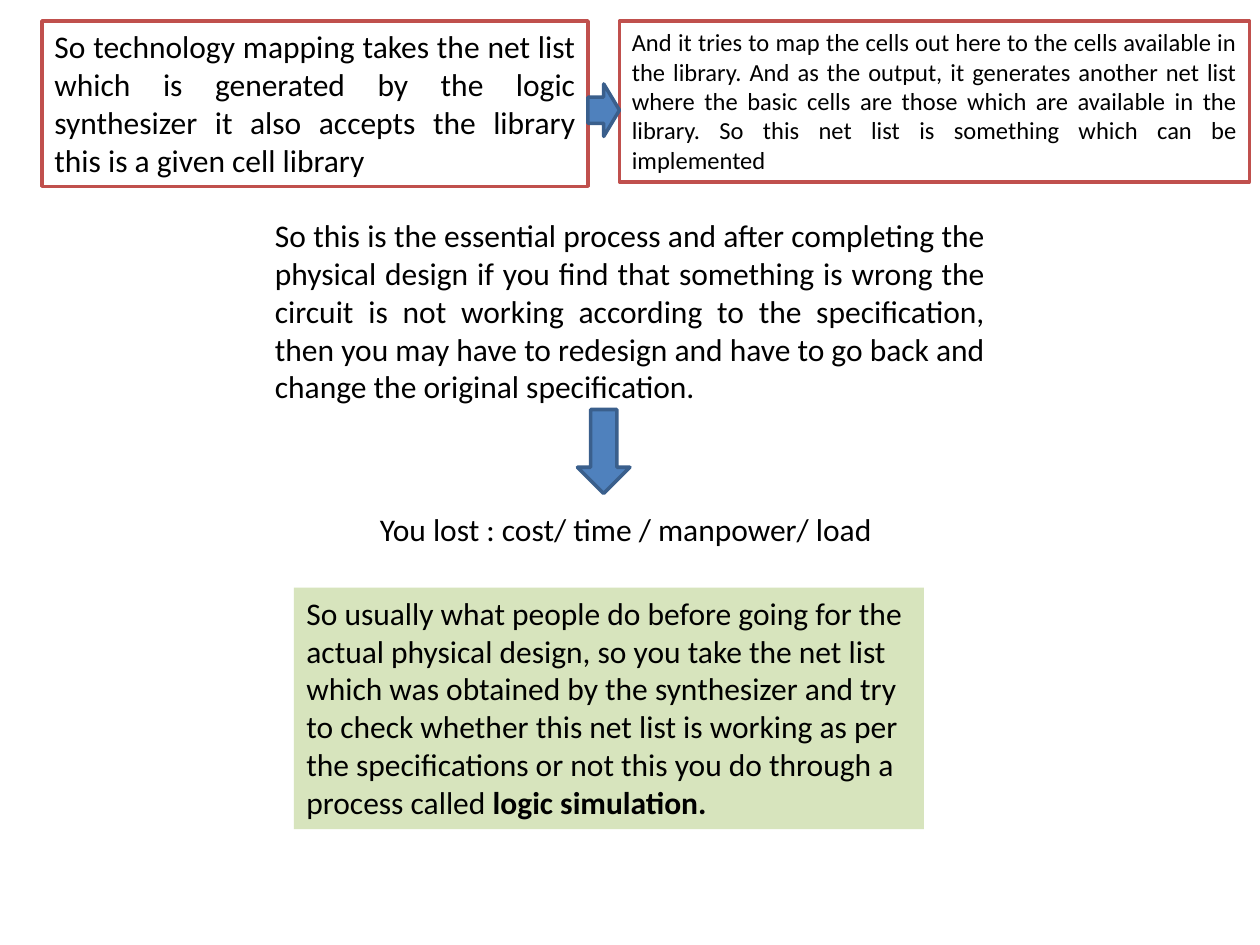
"""Build the slide on technology mapping and logic simulation."""
from pptx import Presentation
from pptx.dml.color import RGBColor
from pptx.enum.shapes import MSO_SHAPE
from pptx.enum.text import MSO_ANCHOR, MSO_AUTO_SIZE, PP_ALIGN
from pptx.util import Pt

BLACK = RGBColor(0x00, 0x00, 0x00)
WHITE = RGBColor(0xFF, 0xFF, 0xFF)
RED = RGBColor(0xC0, 0x50, 0x4D)
BLUE = RGBColor(0x4F, 0x81, 0xBD)
DARK_BLUE = RGBColor(0x3A, 0x5F, 0x8C)
GREEN = RGBColor(0xD7, 0xE4, 0xBD)

deck = Presentation()
deck.slide_width, deck.slide_height = Pt(720), Pt(540)
page = deck.slides.add_slide(deck.slide_layouts[6])


def add_shape(kind, place, fill, line):
    shape = page.shapes.add_shape(kind, *map(Pt, place))
    shape.shadow.inherit = False
    shape.fill.solid()
    shape.fill.fore_color.rgb = fill
    if line is None:
        shape.line.fill.background()
    else:
        shape.line.color.rgb = line
        shape.line.width = Pt(2)
    return shape


def write(box, spans, size=18, align=PP_ALIGN.LEFT, wrap=True):
    frame = box.text_frame
    frame.word_wrap = wrap
    frame.auto_size = MSO_AUTO_SIZE.SHAPE_TO_FIT_TEXT
    frame.vertical_anchor = MSO_ANCHOR.TOP
    para = frame.paragraphs[0]
    para.alignment = align
    for text, bold in spans:
        span = para.add_run()
        span.text = text
        span.font.name = "Calibri"
        span.font.size = Pt(size)
        span.font.bold = bold
        span.font.color.rgb = BLACK


mapping_steps = [
    ((24, 12, 312, 94.5), 18,
     "So technology mapping takes the net list which is generated by the logic "
     "synthesizer it also accepts the library this is a given cell library "),
    ((354, 12, 360, 92), 14,
     "And it tries to map the cells out here to the cells available in the library. "
     "And as the output, it generates another net list where the basic cells are those "
     "which are available in the library. So this net list is something which can be "
     "implemented "),
]
for place, size, text in mapping_steps:
    box = add_shape(MSO_SHAPE.RECTANGLE, place, WHITE, RED)
    write(box, [(text, False)], size, PP_ALIGN.JUSTIFY)

add_shape(MSO_SHAPE.RIGHT_ARROW, (336, 48, 18, 30), BLUE, DARK_BLUE)

redesign = page.shapes.add_textbox(Pt(150), Pt(120), Pt(420), Pt(116.3))
write(redesign, [(
    "So this is the essential process and after completing the physical design if you "
    "find that something is wrong the circuit is not working according to the "
    "specification, then you may have to redesign and have to go back and change the "
    "original specification. ", False)], align=PP_ALIGN.JUSTIFY)

add_shape(MSO_SHAPE.DOWN_ARROW, (330, 234, 30, 48), BLUE, DARK_BLUE)

losses = page.shapes.add_textbox(Pt(210), Pt(288), Pt(299.5), Pt(29))
write(losses, [("You lost : cost/ time / manpower/ load", False)], wrap=False)

simulation = add_shape(MSO_SHAPE.RECTANGLE, (168, 335.8, 360, 138), GREEN, None)
write(simulation, [
    ("So usually what people do before going for the actual physical design, so you take "
     "the net list which was obtained by the synthesizer and try to check whether this "
     "net list is working as per the specifications or not this you do through a process "
     "called ", False),
    ("logic simulation.", True),
])

deck.save("out.pptx")
